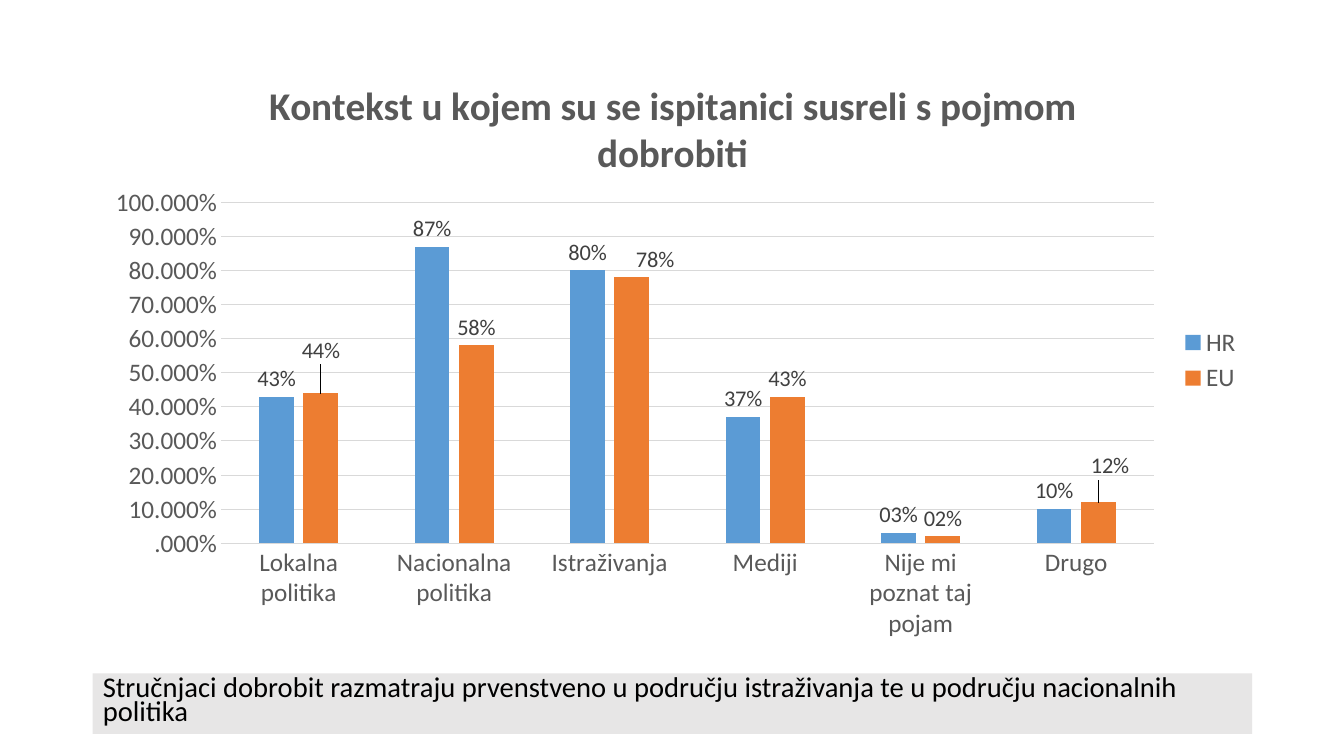
import pptx
import pptx.chart.data
import pptx.dml.color
import pptx.enum.chart
import pptx.enum.text
import pptx.oxml
import pptx.oxml.ns
import pptx.util

HUES = {
    "hr": "5B9BD5", "eu": "ED7D31", "grey": "595959", "label": "404040",
    "grid": "D9D9D9", "band": "E7E6E6", "black": "000000",
}
GROUPS = ["Lokalna politika", "Nacionalna politika", "Istraživanja",
          "Mediji", "Nije mi poznat taj pojam", "Drugo"]
RATES = {
    "HR": [0.43, 0.87, 0.8, 0.37, 0.03, 0.1],
    "EU": [0.44, 0.58, 0.78, 0.43, 0.02, 0.12],
}
# Label shifts by group, as shares of the chart's width and height
SHIFTS = {"EU": {0: (0, -0.04), 2: (0.02, 0), 5: (0.01, -0.03)}}
MASK = "0,0%"


def hue(name):
    return pptx.dml.color.RGBColor.from_string(HUES[name])


def style(font, size, color="grey", bold=False):
    font.name = "Calibri"
    font.size = pptx.util.Pt(size)
    font.bold = bold
    font.color.rgb = hue(color)


def write(frame, text, size=18, color="grey", bold=False, space=None):
    par = frame.paragraphs[0]
    run = par.add_run()
    run.text = text
    style(run.font, size, color, bold)
    if space:
        par.line_spacing = space
    return par


def rule(line):
    line.color.rgb = hue("grid")
    line.width = pptx.util.Pt(0.75)


def shift(label, x, y):
    """Move a data label away from its automatic place."""
    label.position = pptx.enum.chart.XL_LABEL_POSITION.OUTSIDE_END
    style(label.font, 16, "label")
    node = label.font._element if hasattr(label.font, "_element") else None
    node = label._dLbl
    space = pptx.oxml.ns.nsdecls("c")
    layout = pptx.oxml.parse_xml(
        f'<c:layout {space}><c:manualLayout><c:x val="{x}"/>'
        f'<c:y val="{y}"/></c:manualLayout></c:layout>')
    mask = pptx.oxml.parse_xml(
        f'<c:numFmt {space} formatCode="{MASK}" sourceLinked="0"/>')
    node.insert(1, layout)
    node.insert(2, mask)


class Deck:
    def __init__(self):
        self.show = pptx.Presentation()
        self.show.slide_width = pptx.util.Inches(13.33)
        self.show.slide_height = pptx.util.Inches(7.5)
        self.slide = self.show.slides.add_slide(self.show.slide_layouts[2])
        title = self.slide.shapes.title
        title.element.getparent().remove(title.element)

    def area(self, *shares):
        """Turn percentages of the slide into left, top, width, height."""
        wide, high = self.show.slide_width, self.show.slide_height
        return [int(share * full / 100)
                for share, full in zip(shares, (wide, high, wide, high))]

    def chart(self, title, *shares):
        data = pptx.chart.data.CategoryChartData()
        data.categories = GROUPS
        for name, rates in RATES.items():
            data.add_series(name, rates)
        kind = pptx.enum.chart.XL_CHART_TYPE.COLUMN_CLUSTERED
        chart = self.slide.shapes.add_chart(
            kind, *self.area(*shares), data).chart
        style(chart.font, 18)
        write(chart.chart_title.text_frame, title, size=28, bold=True)
        chart.chart_title.include_in_layout = False
        chart.has_legend = True
        chart.legend.position = pptx.enum.chart.XL_LEGEND_POSITION.RIGHT
        chart.legend.include_in_layout = False
        style(chart.legend.font, 18)
        self.axes(chart)
        self.bars(chart.plots[0])

    def axes(self, chart):
        for axis in (chart.category_axis, chart.value_axis):
            axis.major_tick_mark = pptx.enum.chart.XL_TICK_MARK.NONE
            axis.minor_tick_mark = pptx.enum.chart.XL_TICK_MARK.NONE
            style(axis.tick_labels.font, 18)
        rule(chart.category_axis.format.line)
        axis = chart.value_axis
        axis.minimum_scale, axis.maximum_scale, axis.major_unit = 0, 1, 0.1
        axis.format.line.fill.background()
        rule(axis.major_gridlines.format.line)
        axis.tick_labels.number_format = "#.#00%"
        axis.tick_labels.number_format_is_linked = False

    def bars(self, plot):
        plot.gap_width, plot.overlap = 219, -27
        plot.vary_by_categories = False
        for row in plot.series:
            row.format.fill.solid()
            row.format.fill.fore_color.rgb = hue(row.name.lower())
            labels = row.data_labels
            labels.show_value = True
            labels.number_format = MASK
            labels.number_format_is_linked = False
            labels.position = pptx.enum.chart.XL_LABEL_POSITION.OUTSIDE_END
            style(labels.font, 16, "label")
            for group, move in SHIFTS.get(row.name, {}).items():
                shift(row.points[group].data_label, *move)

    def body(self, text, *shares):
        box = self.slide.placeholders[1]
        box.left, box.top, box.width, box.height = self.area(*shares)
        box.fill.solid()
        box.fill.fore_color.rgb = hue("band")
        frame = box.text_frame
        frame.word_wrap = True
        frame.auto_size = pptx.enum.text.MSO_AUTO_SIZE.NONE
        frame.vertical_anchor = pptx.enum.text.MSO_ANCHOR.TOP
        par = write(frame, text, size=20.4, color="black", space=0.7)
        par.space_before = pptx.util.Pt(10)


def main():
    deck = Deck()
    deck.chart("Kontekst u kojem su se ispitanici susreli s pojmom dobrobiti",
               6.9, 7.2, 86.27, 80.93)
    deck.body("Stručnjaci dobrobit razmatraju prvenstveno u području "
              "istraživanja te u području nacionalnih politika",
              6.9, 89.07, 86.27, 8)
    deck.show.save("out.pptx")


if __name__ == "__main__":
    main()
